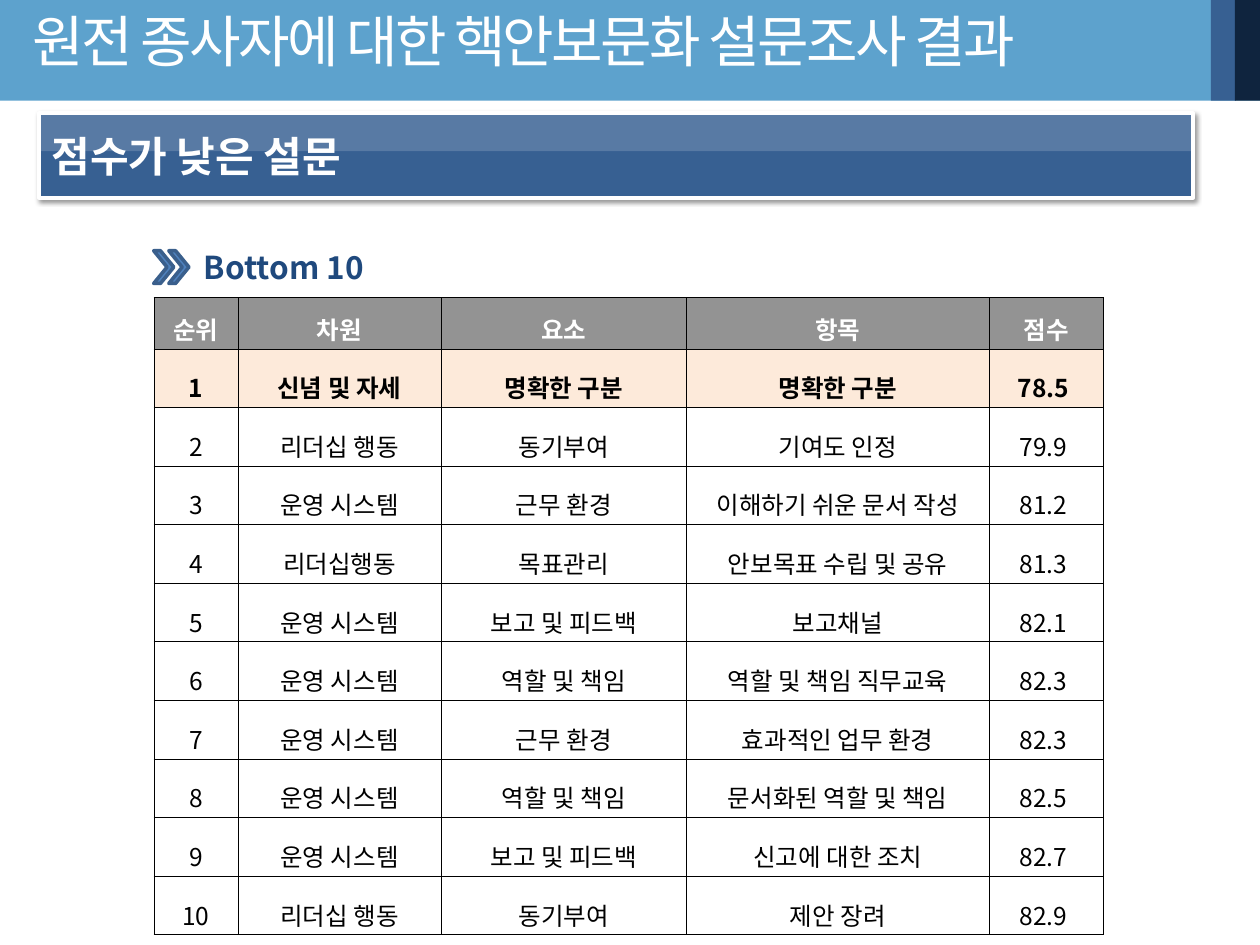
from lxml import etree
from pptx import Presentation
from pptx import util as u
from pptx.dml.color import RGBColor
from pptx.enum import shapes, text
from pptx.oxml import ns

FONT = "Noto Sans CJK KR"
rgb = RGBColor.from_string

presentation = Presentation()
presentation.slide_width, presentation.slide_height = u.Inches(10), u.Inches(7.5)
slide = presentation.slides.add_slide(presentation.slide_layouts[5])

# Grid of 100 columns by 75 rows
COLUMN = presentation.slide_width / 100
ROW = presentation.slide_height / 75


def add_block(parent, kind, left, top, width, height, fill, line=None, weight=0):
    shape = parent.shapes.add_shape(kind, int(left * COLUMN), int(top * ROW),
                                    int(width * COLUMN), int(height * ROW))
    shape.shadow.inherit = False
    shape.fill.solid()
    shape.fill.fore_color.rgb = rgb(fill)
    if line:
        shape.line.color.rgb = rgb(line)
        shape.line.width = u.Pt(weight)
    else:
        shape.line.fill.background()
    return shape


def add_run(paragraph, words, size, color, bold=False):
    run = paragraph.add_run()
    run.text = words
    run.font.size, run.font.bold, run.font.name = u.Pt(size), bold, FONT
    run.font.color.rgb = rgb(color)
    properties = run.font._element
    etree.SubElement(properties, ns.qn("a:ea"), typeface=FONT)
    return properties


# Header band
RECTANGLE = shapes.MSO_SHAPE.RECTANGLE
header = slide.shapes.add_group_shape()
for left, width, color in [(0, 100, "5DA2CD"), (96.1, 2, "376092"), (98, 2, "0F243E")]:
    add_block(header, RECTANGLE, left, 0, width, 8, color)

# Title, brought in front of the band
title = slide.shapes.title
title.left, title.top = int(1.6 * COLUMN), int(0.8 * ROW)
title.width, title.height = int(90 * COLUMN), int(8.1 * ROW)
frame = title.text_frame
frame.auto_size = text.MSO_AUTO_SIZE.NONE
frame.vertical_anchor = text.MSO_ANCHOR.TOP
frame.margin_top = u.Inches(0.03)
paragraph = frame.paragraphs[0]
paragraph.alignment = text.PP_ALIGN.LEFT
paragraph.line_spacing = 0.9
add_run(paragraph, "원전 종사자에 대한 핵안보문화 설문조사 결과", 32, "FFFFFF").set("spc", "-150")
title.element.getparent().append(title.element)

# Section banner with soft shadow and gloss
banner_group = slide.shapes.add_group_shape()
banner = add_block(banner_group, RECTANGLE, 3.1, 9, 91.6, 6.7, "376092", "FFFFFF", 2.25)
effects = banner.element.spPr.find(ns.qn("a:effectLst"))
shadow = etree.SubElement(effects, ns.qn("a:outerShdw"), blurRad=str(u.Pt(3)),
                          dist=str(u.Pt(1)), dir="2700000", algn="tl", rotWithShape="0")
shade = etree.SubElement(shadow, ns.qn("a:srgbClr"), val="000000")
etree.SubElement(shade, ns.qn("a:alpha"), val="40000")
banner.text_frame.vertical_anchor = text.MSO_ANCHOR.MIDDLE
paragraph = banner.text_frame.paragraphs[0]
paragraph.alignment = text.PP_ALIGN.LEFT
add_run(paragraph, "점수가 낮은 설문", 24, "FFFFFF", True)

gloss = add_block(banner_group, RECTANGLE, 3.1, 9.1, 91.6, 2.9, "FFFFFF")
gloss_color = gloss.element.spPr.find(ns.qn("a:solidFill"))[0]
etree.SubElement(gloss_color, ns.qn("a:alpha"), val="17000")

# Ranking table
rows = [
    ("순위", "차원", "요소", "항목", "점수"),
    ("1", "신념 및 자세", "명확한 구분", "명확한 구분", "78.5 "),
    ("2", "리더십 행동", "동기부여", "기여도 인정", "79.9 "),
    ("3", "운영 시스템", "근무 환경", "이해하기 쉬운 문서 작성", "81.2 "),
    ("4", "리더십행동", "목표관리", "안보목표 수립 및 공유", "81.3 "),
    ("5", "운영 시스템", "보고 및 피드백", "보고채널", "82.1 "),
    ("6", "운영 시스템", "역할 및 책임", "역할 및 책임 직무교육", "82.3 "),
    ("7", "운영 시스템", "근무 환경", "효과적인 업무 환경", "82.3 "),
    ("8", "운영 시스템", "역할 및 책임", "문서화된 역할 및 책임", "82.5 "),
    ("9", "운영 시스템", "보고 및 피드백", "신고에 대한 조치", "82.7 "),
    ("10", "리더십 행동", "동기부여", "제안 장려", "82.9 "),
]
column_widths = [6.7, 16.1, 19.5, 24, 9.1]
row_fills = {0: "939393", 1: "FDEADA"}
table = slide.shapes.add_table(
    len(rows), len(column_widths), int(12.2 * COLUMN), int(23.6 * ROW),
    int(sum(column_widths) * COLUMN), int(3.1 * ROW * len(rows))).table
table.first_row = table.horz_banding = False
for column, width in zip(table.columns, column_widths):
    column.width = int(width * COLUMN)

for row_index, row in enumerate(rows):
    for column_index, words in enumerate(row):
        cell = table.cell(row_index, column_index)
        cell.vertical_anchor = text.MSO_ANCHOR.MIDDLE
        cell.margin_left = cell.margin_right = u.Inches(0.07)
        cell.margin_top = cell.margin_bottom = u.Inches(0.02)
        paragraph = cell.text_frame.paragraphs[0]
        paragraph.alignment = text.PP_ALIGN.CENTER
        paragraph.line_spacing = 1.5 if row_index else 1.3
        add_run(paragraph, words, 14, "000000" if row_index else "FFFFFF", row_index < 2)
        # Borders come before the fill in the cell properties
        properties = cell._tc.get_or_add_tcPr()
        for side in ("lnL", "lnR", "lnT", "lnB"):
            border = etree.SubElement(properties, ns.qn("a:" + side), w=str(u.Pt(0.28)))
            ink = etree.SubElement(border, ns.qn("a:solidFill"))
            etree.SubElement(ink, ns.qn("a:srgbClr"), val="000000")
        if row_index in row_fills:
            cell.fill.solid()
            cell.fill.fore_color.rgb = rgb(row_fills[row_index])
        else:
            cell.fill.background()

# Table heading with double chevron
heading = slide.shapes.add_textbox(int(15.2 * COLUMN), int(19.2 * ROW),
                                   int(14.8 * COLUMN), int(4 * ROW))
heading.text_frame.word_wrap = False
heading.text_frame.auto_size = text.MSO_AUTO_SIZE.SHAPE_TO_FIT_TEXT
add_run(heading.text_frame.paragraphs[0], "Bottom 10", 18, "1F497D", True)

chevrons = slide.shapes.add_group_shape()
for left in (12.2, 13.4):
    chevron = add_block(chevrons, shapes.MSO_SHAPE.CHEVRON, left, 19.9, 1.6, 2.6,
                        "4F81BD", "3A5F8C", 2)
    chevron.adjustments[0] = 0.665

presentation.save("out.pptx")
